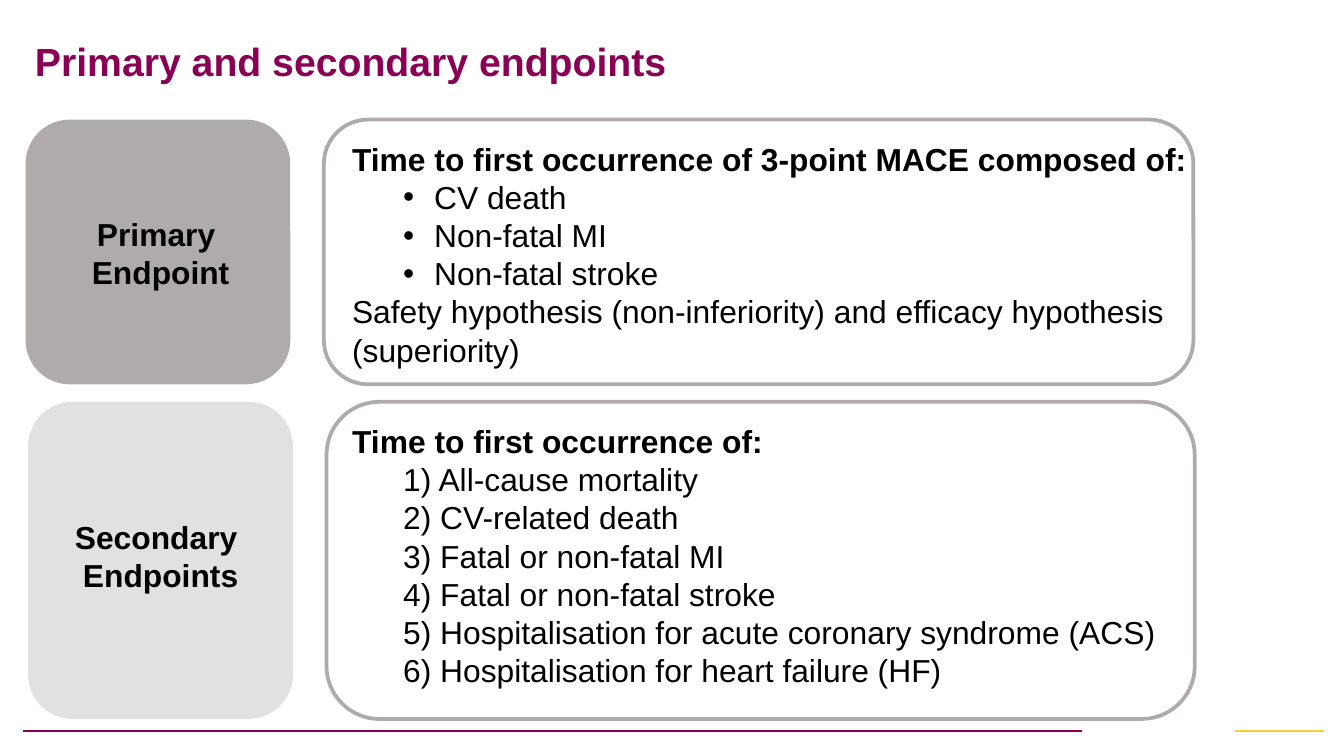
import pptx
import pptx.util
import pptx.dml.color
import pptx.enum.shapes
import pptx.enum.text
import pptx.oxml.ns
from lxml import etree

Inches = pptx.util.Inches
Pt = pptx.util.Pt
RGB = pptx.dml.color.RGBColor.from_string
qn = pptx.oxml.ns.qn

COLORS = {"plum": "8A0054", "gold": "FFCA38", "grey": "AFABAB",
          "light": "D0CECE", "black": "000000"}

deck = pptx.Presentation()
deck.slide_width = Inches(10)
deck.slide_height = Inches(10) * 9 // 16
slide = deck.slides.add_slide(deck.slide_layouts[6])


def add_card(left, top, width, height, fill=None):
    card = slide.shapes.add_shape(
        pptx.enum.shapes.MSO_SHAPE.ROUNDED_RECTANGLE,
        Inches(left), Inches(top), Inches(width), Inches(height))
    card.shadow.inherit = False
    if fill:
        card.fill.solid()
        card.fill.fore_color.rgb = RGB(COLORS[fill])
        card.line.fill.background()
    else:
        card.fill.background()
        card.line.color.rgb = RGB(COLORS["grey"])
        card.line.width = Pt(2)
    return card


def add_text(left, top, width, height, lines, size=17, color="black", spacing=1.0):
    frame = slide.shapes.add_textbox(
        Inches(left), Inches(top), Inches(width), Inches(height)).text_frame
    frame.word_wrap = True
    frame.margin_left = frame.margin_right = Inches(0.07)
    frame.margin_top = frame.margin_bottom = Inches(0.04)
    frame.text = "\n".join(text for text, bold in lines)
    for paragraph, (text, bold) in zip(frame.paragraphs, lines):
        paragraph.line_spacing = spacing
        font = paragraph.runs[0].font
        font.name, font.size, font.bold = "Arial", Pt(size), bold
        font.color.rgb = RGB(COLORS[color])
    return frame


for start, end, color in [(0.17, 8.05, "plum"), (9.19, 9.85, "gold")]:
    footer_rule = slide.shapes.add_connector(
        pptx.enum.shapes.MSO_CONNECTOR.STRAIGHT,
        Inches(start), Inches(5.44), Inches(end), Inches(5.44))
    footer_rule.line.color.rgb = RGB(COLORS[color])
    footer_rule.line.width = Pt(1)
    etree.SubElement(footer_rule._element.spPr, qn("a:effectLst"))

title = add_text(0.19, 0.18, 8.62, 0.59, [("Primary and secondary endpoints", True)],
                 21, "plum", 0.9)
title.vertical_anchor = pptx.enum.text.MSO_ANCHOR.MIDDLE

add_card(2.41, 0.89, 6.47, 1.97)
primary = add_text(2.55, 1, 6.4, 1.79, [
    ("Time to first occurrence of 3-point MACE composed of:", True),
    ("CV death", False),
    ("Non-fatal MI", False),
    ("Non-fatal stroke", False),
    ("Safety hypothesis (non-inferiority) and efficacy hypothesis (superiority)", False),
])

outcomes = ["All-cause mortality", "CV-related death", "Fatal or non-fatal MI",
            "Fatal or non-fatal stroke",
            "Hospitalisation for acute coronary syndrome (ACS)",
            "Hospitalisation for heart failure (HF)"]
secondary = add_text(2.55, 3.1, 6.89, 2.08, [("Time to first occurrence of:", True)] + [
    (f"{number}) {outcome}", False) for number, outcome in enumerate(outcomes, 1)])
add_card(2.43, 2.99, 6.46, 2.36)

add_card(0.19, 0.89, 1.97, 1.97, "grey")
secondary_card = add_card(0.21, 2.99, 1.97, 2.36, "light")
secondary_color = secondary_card._element.spPr.find(qn("a:solidFill"))[0]
etree.SubElement(secondary_color, qn("a:alpha"), val="60000")

for top, words in [(1.56, ["Primary ", "Endpoint"]), (3.81, ["Secondary ", "Endpoints"])]:
    label = add_text(-0.01, top, 2.41, 0.65, [(word, True) for word in words])
    for paragraph in label.paragraphs:
        paragraph.alignment = pptx.enum.text.PP_ALIGN.CENTER

for items, margin, indent, bullet in [(primary.paragraphs[1:4], 0.61, -0.23, "•"),
                                      (secondary.paragraphs[1:], 0.38, 0, None)]:
    for item in items:
        item.level = 1
        properties = item._p.get_or_add_pPr()
        properties.set("marL", str(Inches(margin)))
        properties.set("indent", str(Inches(indent)))
        if bullet:
            etree.SubElement(properties, qn("a:buFont"), typeface="Arial")
            etree.SubElement(properties, qn("a:buChar"), char=bullet)

deck.save("out.pptx")
